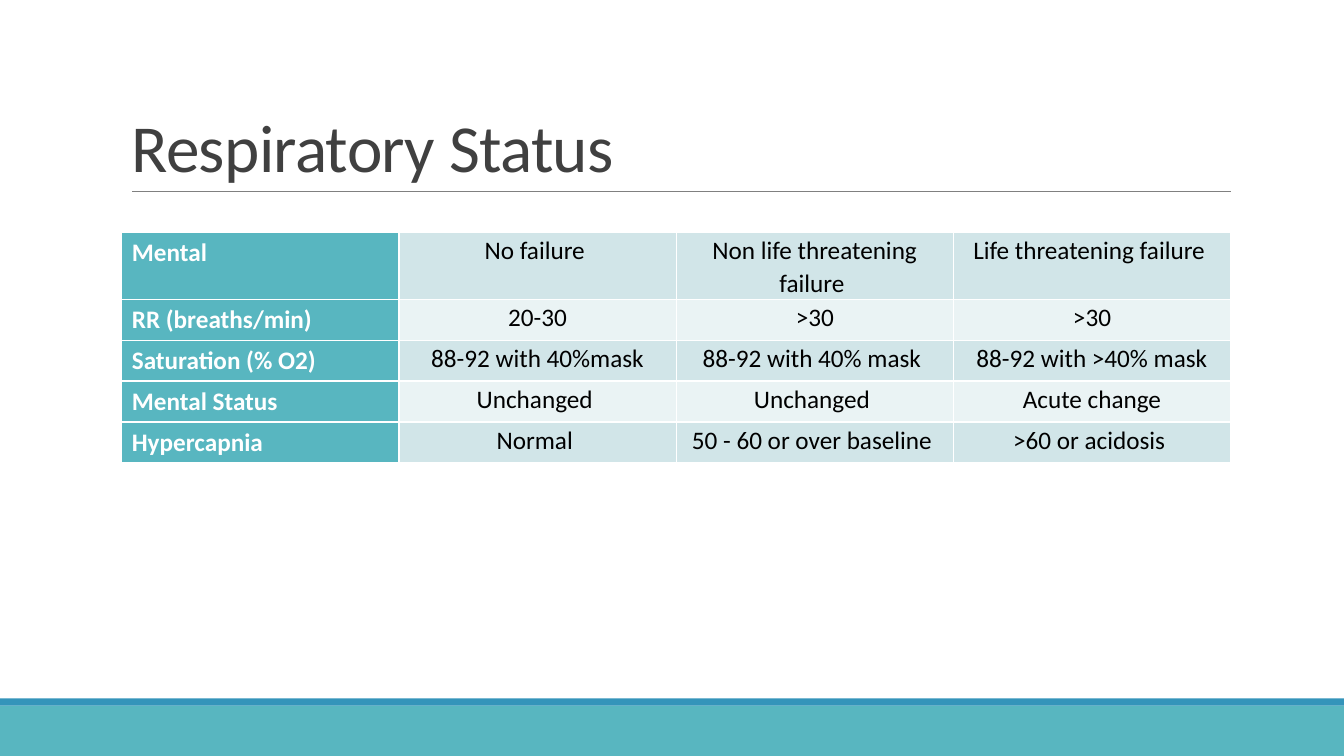
from dataclasses import dataclass

import pptx
import pptx.dml.color
import pptx.enum.shapes
import pptx.enum.text
import pptx.oxml.xmlchemy
import pptx.util

EMU_PER_PX = 9525


@dataclass(frozen=True)
class Theme:
    font: str = "Calibri"
    title_size: int = 48
    table_size: int = 18
    title: str = "404040"
    rule: str = "808080"
    teal: str = "58B6C0"
    blue: str = "3494BA"
    white: str = "FFFFFF"
    text: str = "000000"
    bands: tuple = ("D1E5E8", "EAF3F4")


THEME = Theme()
STATUS_ROWS = [
    ("Mental", "No failure ", "Non life threatening failure ", "Life threatening failure "),
    ("RR (breaths/min)", "20-30", ">30", ">30"),
    ("Saturation (% O2)", "88-92 with 40%mask", "88-92 with 40% mask ", "88-92 with >40% mask"),
    ("Mental Status", "Unchanged ", "Unchanged ", "Acute change"),
    ("Hypercapnia", "Normal ", "50 - 60 or over baseline ", ">60 or acidosis "),
]


def px(length):
    return pptx.util.Emu(length * EMU_PER_PX)


def rgb(color):
    return pptx.dml.color.RGBColor.from_string(color)


def new_element(tag):
    return pptx.oxml.xmlchemy.OxmlElement(tag)


def format_runs(paragraph, size, color, bold=False):
    for run in paragraph.runs:
        run.font.name = THEME.font
        run.font.size = pptx.util.Pt(size)
        run.font.bold = bold
        run.font.color.rgb = rgb(color)


def add_bar(slide, left, top, width, height, color):
    rectangle = pptx.enum.shapes.MSO_SHAPE.RECTANGLE
    bar = slide.shapes.add_shape(rectangle, px(left), px(top), px(width), px(height))
    bar.shadow.inherit = False
    bar.fill.solid()
    bar.fill.fore_color.rgb = rgb(color)
    bar.line.fill.background()


def add_footer(slide, left, top, width, height):
    strip = 7
    add_bar(slide, left, top + strip, width, height - strip, THEME.teal)
    add_bar(slide, left, top, width, strip, THEME.blue)


def add_title(slide, left, top, width, height, text):
    inset = 10
    bottom = top + height
    rule = slide.shapes.add_connector(
        pptx.enum.shapes.MSO_CONNECTOR.STRAIGHT,
        px(left + inset), px(bottom), px(left + width), px(bottom))
    rule.line.color.rgb = rgb(THEME.rule)
    rule.line.width = pptx.util.Pt(0.5)
    rule._element.spPr.append(new_element("a:effectLst"))

    box = slide.shapes.add_textbox(px(left), px(top), px(width), px(height))
    text_frame = box.text_frame
    text_frame.word_wrap = True
    text_frame.vertical_anchor = pptx.enum.text.MSO_ANCHOR.BOTTOM
    text_frame.text = text
    paragraph = text_frame.paragraphs[0]
    paragraph.line_spacing = 0.85
    format_runs(paragraph, THEME.title_size, THEME.title)
    for run in paragraph.runs:
        run._r.get_or_add_rPr().set("spc", "-50")


def add_borders(cell):
    properties = cell._tc.get_or_add_tcPr()
    for index, side in enumerate(("a:lnL", "a:lnR", "a:lnT", "a:lnB")):
        border = new_element(side)
        border.set("w", str(int(pptx.util.Pt(1))))
        fill = new_element("a:solidFill")
        color = new_element("a:srgbClr")
        color.set("val", THEME.white)
        fill.append(color)
        border.append(fill)
        properties.insert(index, border)


def fill_cell(cell, text, is_label, band):
    cell.text_frame.text = text
    paragraph = cell.text_frame.paragraphs[0]
    if is_label:
        format_runs(paragraph, THEME.table_size, THEME.white, bold=True)
    else:
        paragraph.alignment = pptx.enum.text.PP_ALIGN.CENTER
        paragraph.line_spacing = 1.07
        cell.margin_left = cell.margin_right = px(5)
        cell.margin_top = cell.margin_bottom = px(1)
        format_runs(paragraph, THEME.table_size, THEME.text)
    cell.fill.solid()
    cell.fill.fore_color.rgb = rgb(THEME.teal if is_label else band)
    add_borders(cell)


def add_status_table(slide, left, top, width, height, rows):
    row_height = 39
    column_count = len(rows[0])
    frame = slide.shapes.add_table(
        len(rows), column_count, px(left), px(top), px(width), px(height))
    table = frame.table
    for column in table.columns:
        column.width = px(width // column_count)
    for row in table.rows:
        row.height = px(row_height)
    table.rows[0].height = px(height - row_height * (len(rows) - 1))
    for row_index, texts in enumerate(rows):
        band = THEME.bands[row_index % 2]
        for column_index, text in enumerate(texts):
            cell = table.cell(row_index, column_index)
            fill_cell(cell, text, column_index == 0, band)


def main():
    presentation = pptx.Presentation()
    presentation.slide_width = px(1280)
    presentation.slide_height = px(720)
    slide = presentation.slides.add_slide(presentation.slide_layouts[6])
    add_footer(slide, 0, 665, 1280, 55)
    add_title(slide, 116, 30, 1056, 152, "Respiratory Status")
    add_status_table(slide, 116, 221, 1056, 220, STATUS_ROWS)
    presentation.save("out.pptx")


if __name__ == "__main__":
    main()
